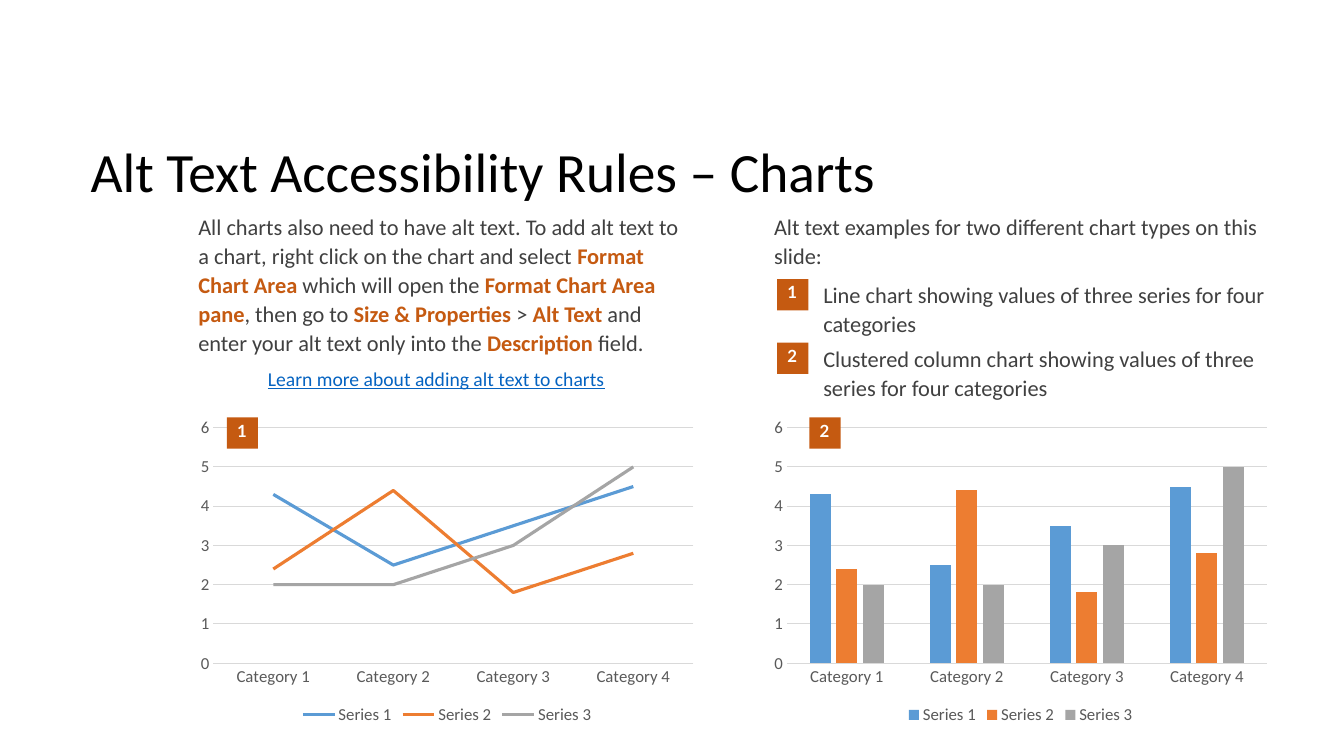
from dataclasses import dataclass

from pptx import Presentation
from pptx import util as u
from pptx.chart.data import CategoryChartData
from pptx.dml.color import RGBColor
from pptx.enum import chart as ch, shapes, text
from pptx.slide import Slide

Pt = u.Pt
COLORS = {
    "black": "000000", "body": "404040", "accent": "C55A11", "white": "FFFFFF",
    "link": "0563C1", "axis": "595959", "grid": "D9D9D9",
}
SERIES = {
    "Series 1": ("5B9BD5", (4.3, 2.5, 3.5, 4.5)),
    "Series 2": ("ED7D31", (2.4, 4.4, 1.8, 2.8)),
    "Series 3": ("A5A5A5", (2, 2, 3, 5)),
}
CATEGORIES = [f"Category {n}" for n in range(1, 5)]


@dataclass
class TextBlock:
    left: float
    top: float
    width: float
    height: float
    runs: list[str]
    size: float = 16
    color: str = "body"
    spacing: float = 1.08
    font: str = "Calibri"
    bold: bool = False
    underline: bool = False
    align: text.PP_ALIGN = text.PP_ALIGN.LEFT
    anchor: text.MSO_ANCHOR = text.MSO_ANCHOR.TOP


@dataclass
class Badge:
    left: float
    top: float
    label: str


@dataclass
class ChartPanel:
    left: float
    kind: ch.XL_CHART_TYPE


def rgb(name: str) -> RGBColor:
    return RGBColor.from_string(COLORS[name])


def add_text(parent, block: TextBlock) -> None:
    """Every second run is emphasised in the accent colour."""
    sp = parent.add_textbox(Pt(block.left), Pt(block.top), Pt(block.width), Pt(block.height))
    tf = sp.text_frame
    tf.word_wrap = True
    tf.vertical_anchor = block.anchor
    p = tf.paragraphs[0]
    p.alignment = block.align
    p.line_spacing = block.spacing
    for i, words in enumerate(block.runs):
        emphasis = i % 2 == 1
        r = p.add_run()
        r.text = words
        r.font.name = block.font
        r.font.size = Pt(block.size)
        r.font.bold = block.bold or emphasis
        r.font.underline = block.underline
        r.font.color.rgb = rgb("accent" if emphasis else block.color)


def add_badge(s: Slide, badge: Badge) -> None:
    group = s.shapes.add_group_shape().shapes
    sp = group.add_shape(shapes.MSO_SHAPE.RECTANGLE, Pt(badge.left), Pt(badge.top), Pt(22.3), Pt(22.3))
    sp.shadow.inherit = False
    sp.fill.solid()
    sp.fill.fore_color.rgb = rgb("accent")
    sp.line.fill.background()
    add_text(group, TextBlock(badge.left - 4.3, badge.top - 1.4, 30.2, 21.6, [badge.label], 12, "white",
                              1, "Lato", bold=True, align=text.PP_ALIGN.CENTER))


def style_font(font) -> None:
    font.name = "Calibri"
    font.size = Pt(12)
    font.color.rgb = rgb("axis")


def add_chart(s: Slide, panel: ChartPanel) -> None:
    data = CategoryChartData()
    data.categories = CATEGORIES
    for name, (_, values) in SERIES.items():
        data.add_series(name, values)
    chart = s.shapes.add_chart(panel.kind, Pt(panel.left), Pt(293.8), Pt(366.5), Pt(226.8), data).chart
    chart.font.name = "Calibri"
    chart.font.size = Pt(10)
    chart.has_title = False
    chart.has_legend = True
    chart.legend.position = ch.XL_LEGEND_POSITION.BOTTOM
    chart.legend.include_in_layout = False
    style_font(chart.legend.font)

    cat, val = chart.category_axis, chart.value_axis
    for axis in (cat, val):
        axis.major_tick_mark = axis.minor_tick_mark = ch.XL_TICK_MARK.NONE
        style_font(axis.tick_labels.font)
    val.minimum_scale, val.maximum_scale, val.major_unit = 0, 6, 1
    val.has_major_gridlines = True
    val.format.line.fill.background()
    for line in (cat.format.line, val.major_gridlines.format.line):
        line.color.rgb = rgb("grid")
        line.width = Pt(0.75)

    plot = chart.plots[0]
    plot.vary_by_categories = False
    is_line = panel.kind == ch.XL_CHART_TYPE.LINE
    if not is_line:
        plot.gap_width, plot.overlap = 219, -27
    for series, (color, _) in zip(plot.series, SERIES.values()):
        if is_line:
            series.smooth = False
            series.format.line.color.rgb = RGBColor.from_string(color)
            series.format.line.width = Pt(2.25)
        else:
            series.format.fill.solid()
            series.format.fill.fore_color.rgb = RGBColor.from_string(color)


TEXTS = [
    TextBlock(57.6, 99.4, 890.6, 50.4, ["Alt Text Accessibility Rules – Charts"], 39.6, "black", 0.9,
              anchor=text.MSO_ANCHOR.MIDDLE),
    TextBlock(134.6, 146.9, 368.6, 150.5, [
        "All charts also need to have alt text. To add alt text to a chart, right click on the chart and select ",
        "Format Chart Area ", "which will open the ", "Format Chart Area pane", ", then go to ",
        "Size & Properties ", "> ", "Alt Text ", "and enter your alt text only into the ",
        "Description", " field."]),
    TextBlock(545.8, 146.9, 375.1, 48.2, ["Alt text examples for two different chart types on this slide:"]),
    TextBlock(581, 195.8, 336.2, 49, ["Line chart showing values of three series for four categories"]),
    TextBlock(581, 241.2, 336.2, 49,
              ["Clustered column chart showing values of three series for four categories"]),
    TextBlock(184.3, 258.5, 285.1, 24.5, ["Learn more about adding alt text to charts"], 14, "link", 1,
              underline=True),
]
CHARTS = [
    ChartPanel(136.1, ch.XL_CHART_TYPE.LINE),
    ChartPanel(545.8, ch.XL_CHART_TYPE.COLUMN_CLUSTERED),
]
BADGES = [
    Badge(555.1, 199.4, "1"), Badge(162, 298.1, "1"),
    Badge(555.1, 244.8, "2"), Badge(578.2, 298.1, "2"),
]


def main() -> None:
    prs = Presentation()
    prs.slide_width, prs.slide_height = Pt(960), Pt(540)
    s = prs.slides.add_slide(prs.slide_layouts[6])
    for block in TEXTS:
        add_text(s.shapes, block)
    for panel in CHARTS:
        add_chart(s, panel)
    for badge in BADGES:
        add_badge(s, badge)
    prs.save("out.pptx")


if __name__ == "__main__":
    main()
